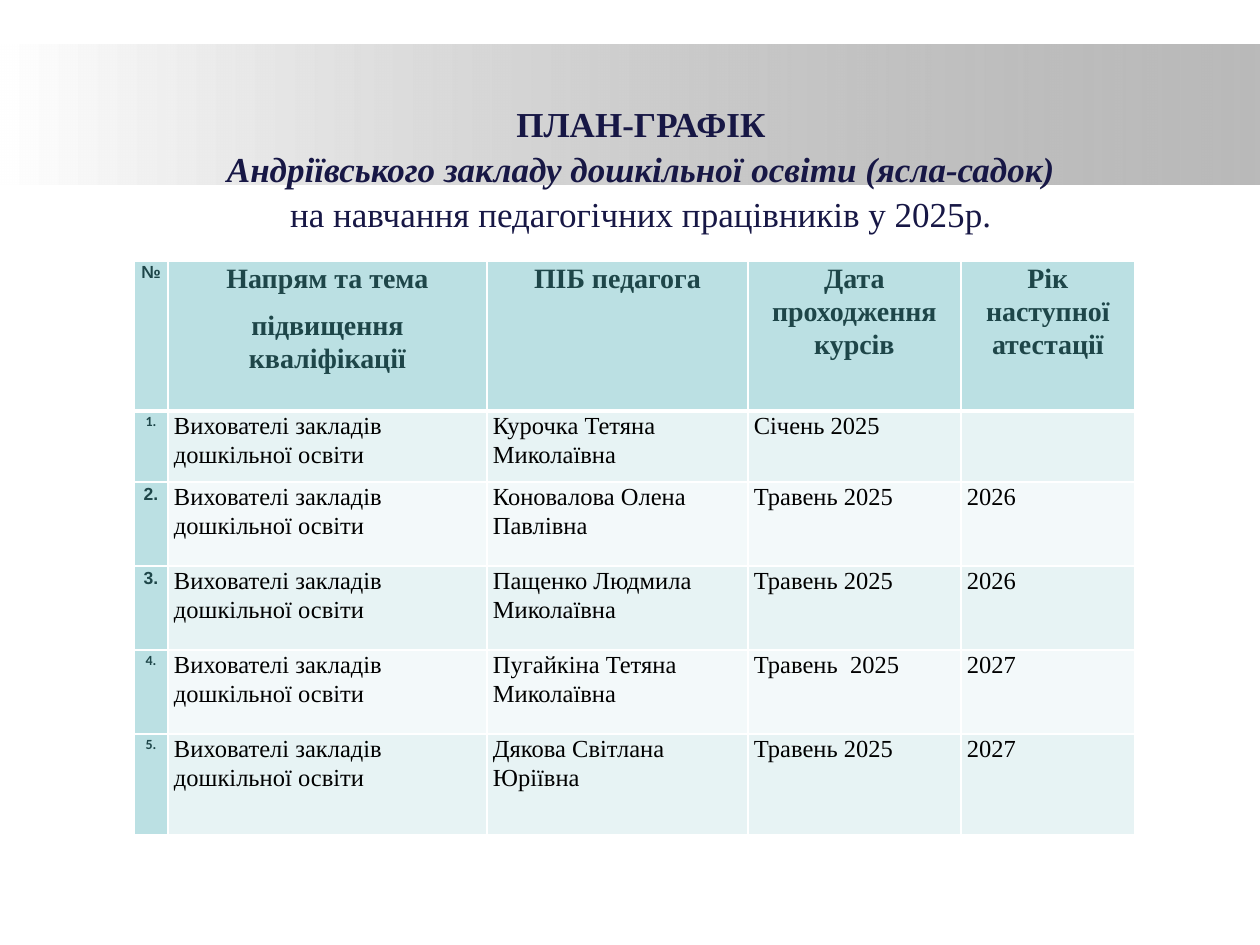
from lxml.etree import SubElement
from pptx import Presentation
from pptx.dml.color import RGBColor
from pptx.enum.shapes import MSO_SHAPE
from pptx.enum.text import MSO_ANCHOR, PP_ALIGN
from pptx.oxml.ns import qn
from pptx.util import Pt

PX = 914400 // 126
WHITE = RGBColor(0xFF, 0xFF, 0xFF)
BLACK = RGBColor(0, 0, 0)
GRAY = RGBColor(0x80, 0x80, 0x80)
NAVY = RGBColor(0x17, 0x17, 0x45)
TEAL = RGBColor(0x1E, 0x46, 0x49)
HEADER_FILL = RGBColor(0xBB, 0xE0, 0xE3)
BAND_FILLS = [RGBColor(0xE7, 0xF3, 0xF4), RGBColor(0xF3, 0xF9, 0xFA)]
SERIF = "Times New Roman"

# text, bold, italic
TITLE = [
    ("ПЛАН-ГРАФІК", True, False),
    ("Андріївського закладу дошкільної освіти (ясла-садок)", True, True),
    ("на навчання педагогічних працівників у 2025р.", False, False),
]
HEADER = ["№", "Напрям та тема\nпідвищення кваліфікації", "ПІБ педагога",
          "Дата проходження курсів", "Рік наступної атестації"]
TOPIC = "Вихователі закладів дошкільної освіти"
TEACHERS = [
    ("Курочка Тетяна Миколаївна", "Січень 2025", ""),
    ("Коновалова Олена Павлівна", "Травень 2025", "2026"),
    ("Пащенко Людмила Миколаївна", "Травень 2025", "2026"),
    ("Пугайкіна Тетяна Миколаївна", "Травень  2025", "2027"),
    ("Дякова Світлана Юріївна", "Травень 2025", "2027"),
]
LARGE_NUMBERS = {2, 3}
COLUMN_WIDTHS = [34, 319, 261, 213, 174]
ROW_HEIGHTS = [150, 71, 84, 84, 84, 101]


def box(*lengths):
    return [length * PX for length in lengths]


def style_font(font, name, size, color, bold, italic=False):
    font.name, font.size, font.bold, font.italic = name, Pt(size), bold, italic
    font.color.rgb = color


def add_band(slide):
    band = slide.shapes.add_shape(MSO_SHAPE.RECTANGLE, *box(0, 45, 1260, 140))
    band.shadow.inherit = False
    band.line.fill.background()
    band.fill.gradient()
    band.fill.gradient_angle = 0
    start, end = band.fill.gradient_stops
    start.color.rgb, start.position = WHITE, 0
    end.color.rgb, end.position = GRAY, 1
    end_color = band._element.spPr.findall(".//" + qn("a:srgbClr"))[-1]
    SubElement(end_color, qn("a:alpha"), val="54000")


def add_title(slide):
    frame = slide.shapes.add_textbox(*box(60, 66, 1162, 202)).text_frame
    frame.word_wrap = True
    frame.vertical_anchor = MSO_ANCHOR.MIDDLE
    frame.text = "\n".join(text for text, _, _ in TITLE)
    for paragraph, (_, bold, italic) in zip(frame.paragraphs, TITLE):
        paragraph.alignment = PP_ALIGN.CENTER
        paragraph.line_spacing = 1.08
        style_font(paragraph.runs[0].font, SERIF, 20, NAVY, bold, italic)


def set_borders(cell, bottom):
    properties = cell._tc.get_or_add_tcPr()
    for side, width in (("L", 1), ("R", 1), ("T", 1), ("B", bottom)):
        line = SubElement(properties, qn(f"a:ln{side}"), w=str(Pt(width)))
        fill = SubElement(line, qn("a:solidFill"))
        SubElement(fill, qn("a:srgbClr"), val=str(WHITE))


def fill_cell(cell, text, row, column):
    is_label = row == 0 or column == 0
    cell.margin_left = cell.margin_right = 6 * PX
    cell.margin_top = cell.margin_bottom = 0
    set_borders(cell, 3 if row == 0 else 1)
    cell.fill.solid()
    cell.fill.fore_color.rgb = HEADER_FILL if is_label else BAND_FILLS[(row - 1) % 2]

    if column == 0:
        name, size = ("Arial", 10) if row == 0 or row in LARGE_NUMBERS else ("Calibri", 8)
    else:
        name, size = SERIF, 16 if row == 0 else 14
    cell.text_frame.text = text
    for paragraph in cell.text_frame.paragraphs:
        paragraph.alignment = PP_ALIGN.CENTER if is_label else PP_ALIGN.LEFT
        paragraph.line_spacing = 1.15 if column == 0 and row else 1.07
        paragraph.space_after = Pt(8)
        for run in paragraph.runs:
            style_font(run.font, name, size, TEAL if is_label else BLACK, is_label)


def add_schedule(slide):
    rows = [HEADER] + [[f"{number}.", TOPIC, *teacher]
                       for number, teacher in enumerate(TEACHERS, 1)]
    table = slide.shapes.add_table(
        len(rows), len(HEADER),
        *box(134, 261, sum(COLUMN_WIDTHS), sum(ROW_HEIGHTS))).table
    for column, width in zip(table.columns, COLUMN_WIDTHS):
        column.width = width * PX
    for row, height in zip(table.rows, ROW_HEIGHTS):
        row.height = height * PX
    for r, texts in enumerate(rows):
        for c, text in enumerate(texts):
            fill_cell(table.cell(r, c), text, r, c)


def main():
    presentation = Presentation()
    presentation.slide_width, presentation.slide_height = box(1260, 945)
    slide = presentation.slides.add_slide(presentation.slide_layouts[6])
    add_band(slide)
    add_title(slide)
    add_schedule(slide)
    presentation.save("out.pptx")


if __name__ == "__main__":
    main()
